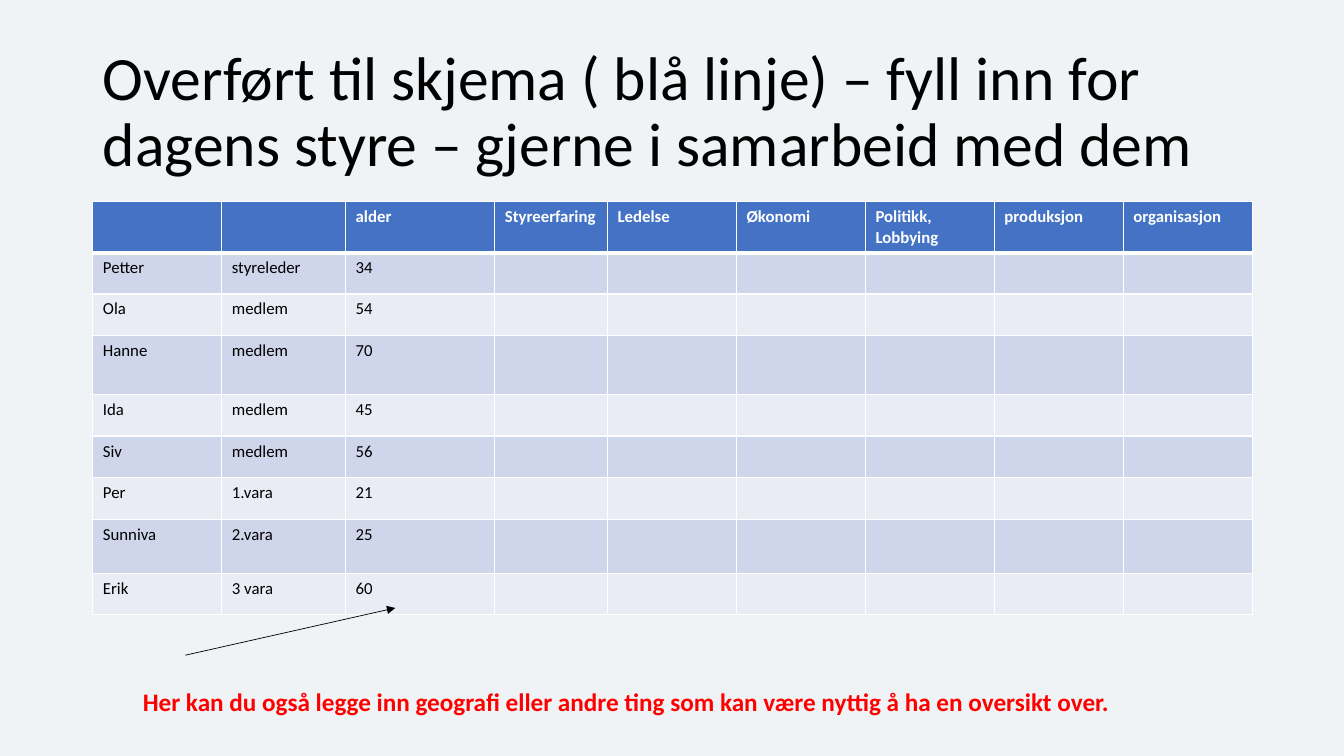
from dataclasses import dataclass

from lxml.etree import SubElement
from pptx import Presentation
from pptx.dml.color import RGBColor
from pptx.enum.shapes import MSO_CONNECTOR as Connector
from pptx.enum.text import MSO_ANCHOR as Anchor, MSO_AUTO_SIZE as AutoSize, PP_ALIGN as Align
from pptx.oxml.ns import qn
from pptx.util import Cm, Pt

FONT = "Calibri"
BLACK = RGBColor(0x00, 0x00, 0x00)
WHITE = RGBColor(0xFF, 0xFF, 0xFF)
RED = RGBColor(0xFF, 0x00, 0x00)
BACKGROUND = RGBColor(0xEF, 0xF3, 0xF5)
HEADER_BLUE = RGBColor(0x44, 0x72, 0xC4)
DARK_BAND = RGBColor(0xCF, 0xD5, 0xEA)
LIGHT_BAND = RGBColor(0xE9, 0xEB, 0xF5)


@dataclass(frozen=True)
class Column:
    heading: str
    width: float = 3.25


@dataclass(frozen=True)
class Member:
    name: str
    role: str
    age: int
    height: float = 1.04


COLUMNS = [
    Column(""),
    Column("", 3.12),
    Column("alder", 3.76),
    Column("Styreerfaring", 2.84),
    Column("Ledelse"),
    Column("Økonomi"),
    Column("Politikk, Lobbying"),
    Column("produksjon"),
    Column("organisasjon"),
]
MEMBERS = [
    Member("Petter", "styreleder", 34),
    Member("Ola", "medlem", 54),
    Member("Hanne", "medlem", 70, 1.5),
    Member("Ida", "medlem", 45),
    Member("Siv", "medlem", 56),
    Member("Per", "1.vara", 21, 1.07),
    Member("Sunniva", "2.vara", 25, 1.35),
    Member("Erik", "3 vara", 60),
]
HEADER_HEIGHT = 1.26


def write(frame, text: str, *, size: float, color: RGBColor = BLACK, bold: bool = False,
          line_spacing: float = 1.0) -> None:
    para = frame.paragraphs[0]
    para.alignment = Align.LEFT
    para.line_spacing = line_spacing
    span = para.add_run()
    span.text = text
    span.font.name = FONT
    span.font.size = Pt(size)
    span.font.bold = bold
    span.font.color.rgb = color


def add_borders(cell, *, bottom: float) -> None:
    properties = cell._tc.get_or_add_tcPr()
    for side, width in (("L", 1), ("R", 1), ("T", 1), ("B", bottom)):
        line = SubElement(properties, qn(f"a:ln{side}"), w=str(Pt(width)))
        fill = SubElement(line, qn("a:solidFill"))
        SubElement(fill, qn("a:srgbClr"), val=str(WHITE))


def format_cell(cell, text: str, *, fill: RGBColor, color: RGBColor = BLACK,
                bold: bool = False, bottom: float = 1) -> None:
    add_borders(cell, bottom=bottom)
    cell.fill.solid()
    cell.fill.fore_color.rgb = fill
    if text:
        write(cell.text_frame, text, size=12, color=color, bold=bold)


def add_title(page) -> None:
    title = page.shapes.title
    title.left, title.top, title.width, title.height = Cm(2.34), Cm(1.02), Cm(29.21), Cm(3.68)
    frame = title.text_frame
    frame.auto_size = AutoSize.NONE
    frame.vertical_anchor = Anchor.MIDDLE
    write(frame, "Overført til skjema ( blå linje) – fyll inn for dagens styre – gjerne i samarbeid med dem",
          size=44, line_spacing=0.9)


def add_board_table(page) -> None:
    heights = [HEADER_HEIGHT] + [member.height for member in MEMBERS]
    total_width = sum(column.width for column in COLUMNS)
    table = page.shapes.add_table(len(heights), len(COLUMNS), Cm(2.34), Cm(5.08),
                                  Cm(total_width), Cm(sum(heights))).table
    for row, height in zip(table.rows, heights):
        row.height = Cm(height)
    for index, column in enumerate(COLUMNS):
        table.columns[index].width = Cm(column.width)
        format_cell(table.cell(0, index), column.heading, fill=HEADER_BLUE,
                    color=WHITE, bold=True, bottom=3)
    for number, member in enumerate(MEMBERS, start=1):
        values = [member.name, member.role, str(member.age)]
        values += [""] * (len(COLUMNS) - len(values))
        band = DARK_BAND if number % 2 else LIGHT_BAND
        for index, value in enumerate(values):
            format_cell(table.cell(number, index), value, fill=band)


def add_note(page) -> None:
    box = page.shapes.add_textbox(Cm(3.35), Cm(17.17), Cm(25.1), Cm(1.02))
    box.text_frame.word_wrap = False
    box.text_frame.auto_size = AutoSize.SHAPE_TO_FIT_TEXT
    write(box.text_frame,
          "Her kan du også legge inn geografi eller andre ting som kan være nyttig å ha en oversikt over.",
          size=18, color=RED, bold=True)


def add_arrow(page) -> None:
    arrow = page.shapes.add_connector(Connector.STRAIGHT, Cm(4.67), Cm(16.51), Cm(9.96), Cm(15.32))
    arrow.line.color.rgb = BLACK
    arrow.line.width = Pt(0.5)
    SubElement(arrow.line._get_or_add_ln(), qn("a:tailEnd"), type="triangle")
    SubElement(arrow._element.spPr, qn("a:effectLst"))


def main() -> None:
    deck = Presentation()
    deck.slide_width, deck.slide_height = Cm(33.87), Cm(19.05)
    page = deck.slides.add_slide(deck.slide_layouts.get_by_name("Title Only"))
    page.background.fill.solid()
    page.background.fill.fore_color.rgb = BACKGROUND
    add_title(page)
    add_board_table(page)
    add_note(page)
    add_arrow(page)
    deck.save("out.pptx")


if __name__ == "__main__":
    main()
